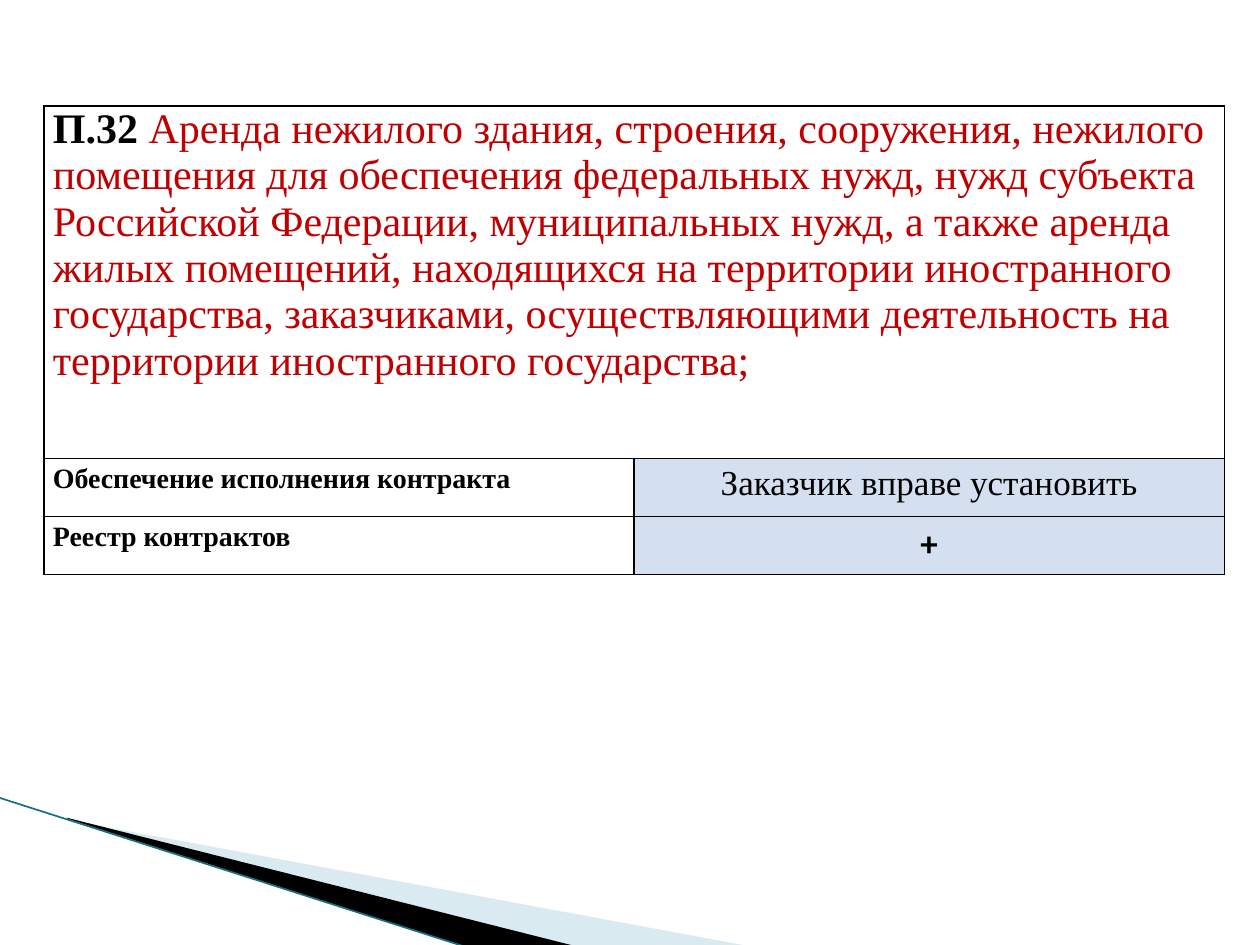
from lxml import etree
from pptx import Presentation
from pptx.dml.color import RGBColor
from pptx.enum.shapes import MSO_CONNECTOR
from pptx.enum.text import PP_ALIGN
from pptx.oxml.ns import qn
from pptx.util import Inches, Pt

LEFT, CENTER = PP_ALIGN.LEFT, PP_ALIGN.CENTER
STRAIGHT = MSO_CONNECTOR.STRAIGHT
SERIF = "Times New Roman"
BLACK, RED, PALE_BLUE = "000000", "C00000", "D4DFEF"

LEASE_TEXT = (
    "Аренда нежилого здания, строения, сооружения, нежилого помещения для "
    "обеспечения федеральных нужд, нужд субъекта Российской Федерации, "
    "муниципальных нужд, а также аренда жилых помещений, находящихся на "
    "территории иностранного государства, заказчиками, осуществляющими "
    "деятельность на территории иностранного государства;"
)
# Requirement, answer, answer font, answer is bold
REQUIREMENTS = [
    ("Обеспечение исполнения контракта", "Заказчик вправе установить", SERIF, False),
    ("Реестр контрактов", "+", "Calibri", True),
]


def rgb(color):
    return RGBColor.from_string(color)


def add_wedge(slide, points, color, opacity=100):
    corners = [(Inches(x), Inches(y)) for x, y in points]
    builder = slide.shapes.build_freeform(*corners[0])
    builder.add_line_segments(corners[1:], close=True)
    wedge = builder.convert_to_shape()
    wedge.shadow.inherit = False
    wedge.fill.solid()
    wedge.fill.fore_color.rgb = rgb(color)
    wedge.line.fill.background()
    if opacity < 100:
        tint = wedge.fill._xPr.find(".//" + qn("a:srgbClr"))
        etree.SubElement(tint, qn("a:alpha"), val=str(opacity * 1000))


def add_line(slide, start, end, color, width):
    ends = [Inches(value) for value in start + end]
    line = slide.shapes.add_connector(STRAIGHT, *ends)
    line.line.color.rgb = rgb(color)
    line.line.width = Pt(width)
    etree.SubElement(line._element.spPr, qn("a:effectLst"))


def style_cell(cell, fill=None):
    cell.margin_left = cell.margin_right = Inches(0.07)
    cell.margin_top = cell.margin_bottom = 0
    properties = cell._tc.get_or_add_tcPr()
    for side in ("lnL", "lnR", "lnT", "lnB"):
        border = etree.SubElement(properties, qn("a:" + side), w=str(Pt(1)))
        paint = etree.SubElement(border, qn("a:solidFill"))
        etree.SubElement(paint, qn("a:srgbClr"), val=BLACK)
    if fill:
        cell.fill.solid()
        cell.fill.fore_color.rgb = rgb(fill)
    else:
        cell.fill.background()


def write_cell(cell, runs, size, font=SERIF, align=LEFT, spacing=1.0):
    """Each run is (text, color, bold)."""
    paragraph = cell.text_frame.paragraphs[0]
    paragraph.alignment = align
    paragraph.line_spacing = spacing
    for text, color, bold in runs:
        run = paragraph.add_run()
        run.text = text
        run.font.name = font
        run.font.size = Pt(size)
        run.font.bold = bold
        run.font.color.rgb = rgb(color)


def add_requirements_table(slide):
    table = slide.shapes.add_table(
        3, 2, Inches(0.35), Inches(0.84), Inches(9.37), Inches(3.71)
    ).table
    table.first_row = table.horz_banding = False
    for column, width in zip(table.columns, (4.68, 4.69)):
        column.width = Inches(width)
    for row, height in zip(table.rows, (2.8, 0.46, 0.46)):
        row.height = Inches(height)

    # Clause across both columns
    clause = table.cell(0, 0)
    clause.merge(table.cell(0, 1))
    style_cell(clause)
    style_cell(table.cell(0, 1))
    write_cell(clause, [("П.32 ", BLACK, True), (LEASE_TEXT, RED, False)], 24)

    # Requirements and answers
    for index, (name, answer, font, bold) in enumerate(REQUIREMENTS, start=1):
        name_cell, answer_cell = table.cell(index, 0), table.cell(index, 1)
        style_cell(name_cell)
        write_cell(name_cell, [(name, BLACK, True)], 16, spacing=1.15)
        style_cell(answer_cell, PALE_BLUE)
        write_cell(answer_cell, [(answer, BLACK, bold)], 20, font, CENTER, 1.15)


def main():
    presentation = Presentation()
    presentation.slide_width = Inches(10)
    presentation.slide_height = Inches(7.5)
    slide = presentation.slides.add_slide(presentation.slide_layouts[6])

    # Corner decoration
    add_wedge(slide, [(0.55, 6.51), (5.95, 7.51), (4.56, 7.51), (0.55, 6.5)], "A0CBDC", 40)
    add_wedge(slide, [(0.53, 6.49), (4.57, 7.51), (3.72, 7.52), (0.54, 6.5)], BLACK)
    add_line(slide, (-0.01, 6.33), (3.71, 7.52), "17707F", 0.95)

    add_requirements_table(slide)
    presentation.save("out.pptx")


if __name__ == "__main__":
    main()
